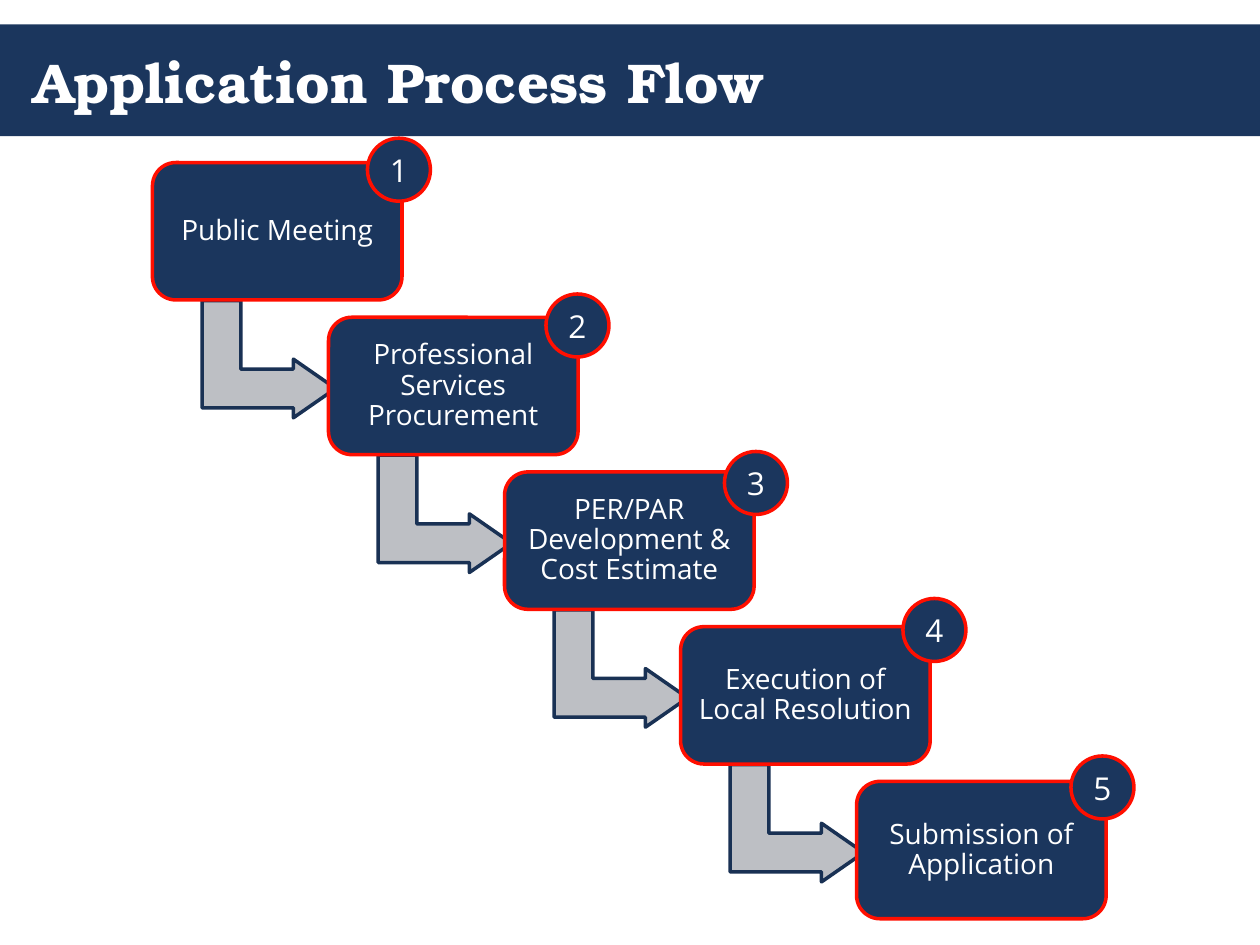
from pptx import Presentation
from pptx.dml.color import RGBColor
from pptx.enum import shapes, text
from pptx.util import Pt

TITLE = "Application Process Flow"
# step wording, top-left corner of its number badge
STEPS = [
    ("Public Meeting", (210, 79)),
    ("Professional Services Procurement", (312, 168)),
    ("PER/PAR Development & Cost Estimate", (414, 258)),
    ("Execution of Local Resolution", (516, 342)),
    ("Submission of Application", (612, 432)),
]
COLORS = {"navy": "1B365D", "edge": "193154", "red": "FF0F00",
          "gray": "BDBFC4", "white": "FFFFFF"}

BOX_X, BOX_Y, BOX_W, BOX_H = 87.1, 92.9, 142.6, 78.5
STEP_X, STEP_Y = 100.6, 88.4
ARROW_DX, ARROW_DY, ARROW_W, ARROW_H = 33, 74.2, 67, 76.3
BADGE = 36

BODY = {"name": "Open Sans", "size": Pt(16)}
NUMBER = {"name": "Open Sans", "size": Pt(18)}
HEADING = {"name": "TeX Gyre Bonum", "size": Pt(32), "bold": True}
SHAPE = shapes.MSO_SHAPE


def rgb(name):
    return RGBColor.from_string(COLORS[name])


def add_shape(slide, kind, box, fill, line=None, adjustments=()):
    sp = slide.shapes.add_shape(kind, *map(Pt, box))
    sp.shadow.inherit = False
    sp.fill.solid()
    sp.fill.fore_color.rgb = rgb(fill)
    if line:
        sp.line.color.rgb = rgb(line)
        sp.line.width = Pt(2)
    else:
        sp.line.fill.background()
    for i, value in enumerate(adjustments):
        sp.adjustments[i] = value
    return sp


def write(sp, words, font, align=text.PP_ALIGN.CENTER, inset=None, spacing=None):
    tf = sp.text_frame
    tf.word_wrap = True
    tf.vertical_anchor = text.MSO_ANCHOR.MIDDLE
    if inset is not None:
        for side in ("left", "top", "right", "bottom"):
            setattr(tf, f"margin_{side}", Pt(inset))
    p = tf.paragraphs[0]
    p.alignment = align
    if spacing:
        p.line_spacing = spacing
    r = p.add_run()
    r.text = words
    for key, value in font.items():
        setattr(r.font, key, value)
    r.font.color.rgb = rgb("white")


def main():
    prs = Presentation()
    prs.slide_width, prs.slide_height = Pt(720), Pt(540)
    s = prs.slides.add_slide(prs.slide_layouts[6])

    add_shape(s, SHAPE.RECTANGLE, (0, 13.9, 720, 64), "navy")
    title = s.shapes.add_textbox(Pt(12), Pt(13.9), Pt(696), Pt(64.5))
    write(title, TITLE, HEADING, text.PP_ALIGN.LEFT)

    for i, (words, _) in enumerate(STEPS):
        x, y = BOX_X + i * STEP_X, BOX_Y + i * STEP_Y
        if i < len(STEPS) - 1:
            arrow = add_shape(s, SHAPE.BENT_UP_ARROW,
                              (x + ARROW_DX, y + ARROW_DY, ARROW_W, ARROW_H),
                              "gray", "edge", (0.33, 0.25, 0.36))
            arrow.rotation = 90
        box = add_shape(s, SHAPE.ROUNDED_RECTANGLE, (x, y, BOX_W, BOX_H),
                        "navy", "red", (0.17,))
        write(box, words, BODY, inset=5, spacing=0.9)

    for number, (_, corner) in enumerate(STEPS, 1):
        badge = add_shape(s, SHAPE.FLOWCHART_CONNECTOR, (*corner, BADGE, BADGE),
                          "navy", "red")
        write(badge, str(number), NUMBER)

    prs.save("out.pptx")


if __name__ == "__main__":
    main()
